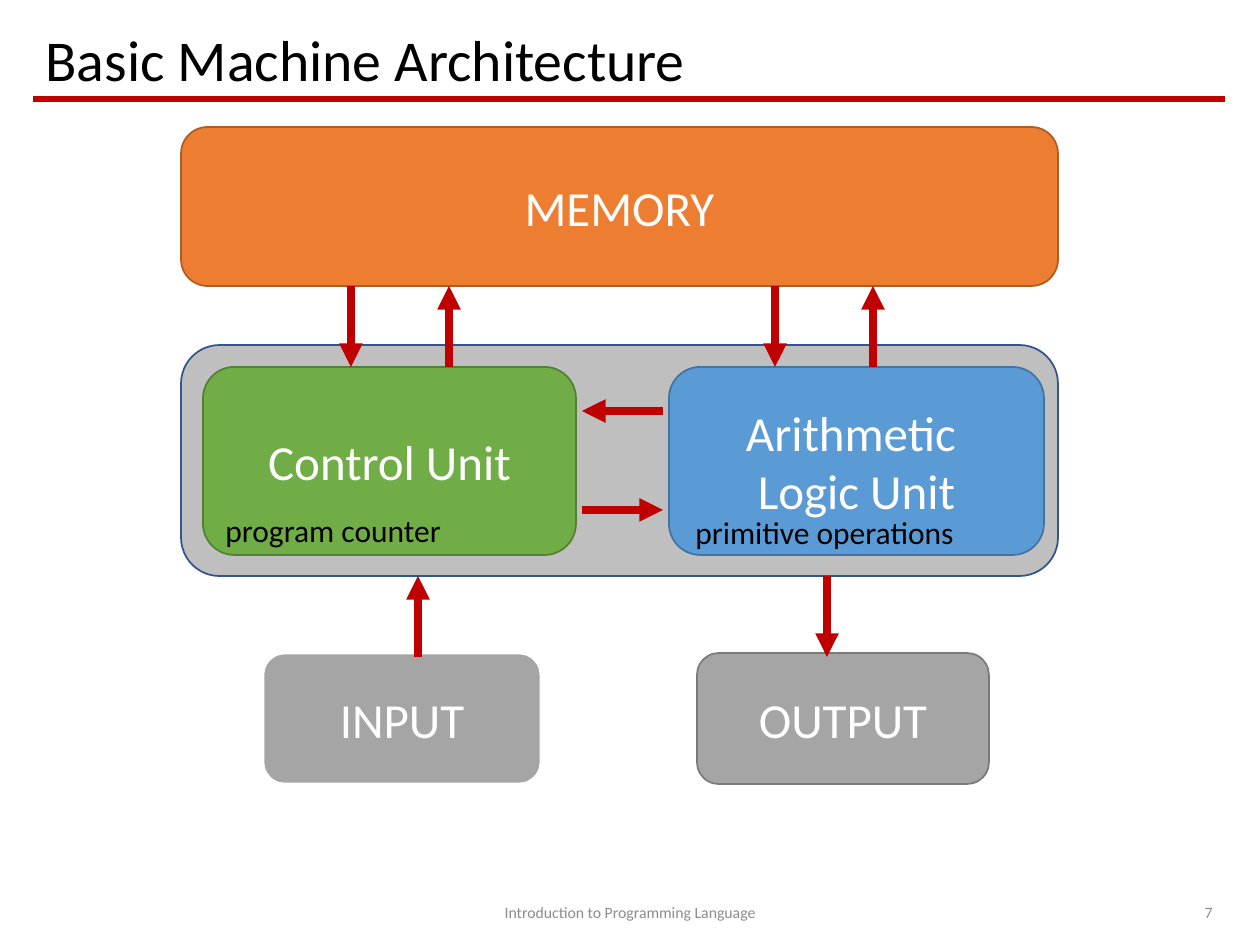
from lxml import etree
from pptx import Presentation
from pptx.dml.color import RGBColor
from pptx.enum.shapes import MSO_CONNECTOR, MSO_SHAPE
from pptx.enum.text import MSO_ANCHOR, MSO_AUTO_SIZE, PP_ALIGN
from pptx.oxml.ns import qn
from pptx.util import Emu, Pt

STRAIGHT = MSO_CONNECTOR.STRAIGHT
ROUNDED = MSO_SHAPE.ROUNDED_RECTANGLE
MIDDLE, BOTTOM, TOP = MSO_ANCHOR.MIDDLE, MSO_ANCHOR.BOTTOM, MSO_ANCHOR.TOP
LEFT, CENTER, RIGHT = PP_ALIGN.LEFT, PP_ALIGN.CENTER, PP_ALIGN.RIGHT
NO_AUTOSIZE, GROW = MSO_AUTO_SIZE.NONE, MSO_AUTO_SIZE.SHAPE_TO_FIT_TEXT
PX_PER_INCH = 126
FONT = "Calibri"
RED, WHITE, BLACK, MUTED = "C00000", "FFFFFF", "000000", "8C8C8C"

UNITS = [
    ("MEMORY", (181, 127, 877, 159), "ED7D31", "AF5C24", 1),
    ("", (181, 345, 877, 231), "BFBFBF", "325491", 1),
    ("Control Unit", (203, 367, 373, 188), "70AD47", "538035", 1),
    ("Arithmetic \nLogic Unit", (669, 367, 375, 188), "5B9BD5", "43739E", 1),
    ("INPUT", (263, 653, 278, 131), "A5A5A5", WHITE, 1.5),
    ("OUTPUT", (697, 653, 292, 131), "A5A5A5", "7A7A7A", 1),
]
ARROWS = [
    (351, 286, 351, 367),
    (449, 367, 449, 286),
    (775, 286, 775, 367),
    (873, 367, 873, 286),
    (582, 510, 663, 510),
    (663, 411, 582, 411),
    (827, 576, 827, 657),
    (418, 657, 418, 576),
]


def px(length):
    return Emu(round(length * 914400 / PX_PER_INCH))


def color(value):
    return RGBColor.from_string(value)


def write(shape, text, size, ink, align, anchor):
    frame = shape.text_frame
    frame.text = text
    frame.word_wrap = True
    frame.vertical_anchor = anchor
    for para in frame.paragraphs:
        para.alignment = align
        for span in para.runs:
            span.font.name = FONT
            span.font.size = Pt(size)
            span.font.color.rgb = color(ink)
    return frame


def add_title(page, text):
    title = page.shapes.title
    title.left, title.top, title.width, title.height = map(px, (33, 21, 1192, 79))
    frame = write(title, text, 33, BLACK, LEFT, BOTTOM)
    frame.auto_size = NO_AUTOSIZE
    frame.paragraphs[0].line_spacing = 0.9


def add_label(page, text, bounds, size, ink, align=LEFT, anchor=TOP):
    box = page.shapes.add_textbox(*map(px, bounds))
    return write(box, text, size, ink, align, anchor)


def add_note(page, text, bounds):
    frame = add_label(page, text, bounds, 18, BLACK)
    frame.word_wrap = False
    frame.auto_size = GROW


def add_unit(page, text, bounds, fill, outline, weight):
    unit = page.shapes.add_shape(ROUNDED, *map(px, bounds))
    unit.shadow.inherit = False
    unit.fill.solid()
    unit.fill.fore_color.rgb = color(fill)
    unit.line.color.rgb = color(outline)
    unit.line.width = Pt(weight)
    if text:
        write(unit, text, 28, WHITE, CENTER, MIDDLE)


def add_line(page, ends, weight):
    line = page.shapes.add_connector(STRAIGHT, *map(px, ends))
    line.line.color.rgb = color(RED)
    line.line.width = Pt(weight)
    etree.SubElement(line._element.spPr, qn("a:effectLst"))
    return line


def add_arrow(page, ends):
    arrow = add_line(page, ends, 4.5)
    outline = arrow.line._get_or_add_ln()
    etree.SubElement(outline, qn("a:tailEnd"), type="triangle")


def main():
    deck = Presentation()
    deck.slide_width, deck.slide_height = px(1260), px(945)
    page = deck.slides.add_slide(deck.slide_layouts[5])
    add_line(page, (33, 99, 1225, 99), 3)
    add_title(page, "Basic Machine Architecture")
    add_label(page, "Introduction to Programming Language", (417, 895, 426, 33), 9, MUTED, CENTER, BOTTOM)
    add_label(page, "7", (890, 895, 335, 33), 9, MUTED, RIGHT, BOTTOM)
    for unit in UNITS:
        add_unit(page, *unit)
    for ends in ARROWS:
        add_arrow(page, ends)
    add_note(page, "program counter", (213, 505, 243, 50))
    add_note(page, "primitive operations", (683, 507, 287, 50))
    deck.save("out.pptx")


if __name__ == "__main__":
    main()
